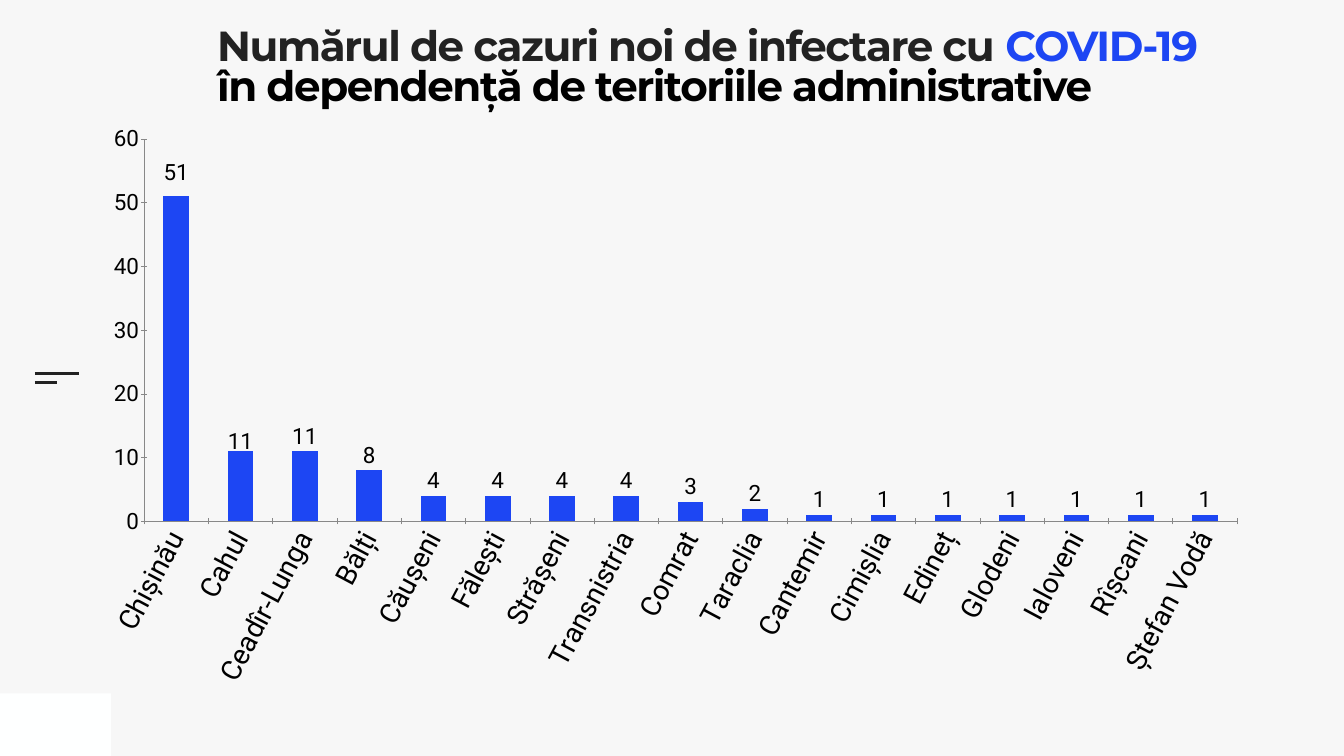
import pptx
import pptx.chart.data
import pptx.dml.color
import pptx.enum.chart
import pptx.enum.shapes
import pptx.util
from lxml import etree
from pptx.oxml.ns import qn

Inches, Pt = pptx.util.Inches, pptx.util.Pt
XL = pptx.enum.chart

# Content
HUES = {"back": "F7F7F7", "box": "FEFFFF", "dark": "222222",
        "blue": "1D46F3", "black": "000000", "axis": "888888"}
TITLE = [
    [("Numărul de cazuri noi de infectare cu ", "dark"), ("COVID-19", "blue")],
    [("în dependență de teritoriile administrative", "black")],
]
CASES = {
    "Chișinău": 51, "Cahul": 11, "Ceadîr-Lunga": 11, "Bălți": 8,
    "Căușeni": 4, "Fălești": 4, "Strășeni": 4, "Transnistria": 4,
    "Comrat": 3, "Taraclia": 2, "Cantemir": 1, "Cimișlia": 1,
    "Edineț": 1, "Glodeni": 1, "Ialoveni": 1, "Rîșcani": 1,
    "Ștefan Vodă": 1,
}
DASHES = [(7.41, 0.88), (7.59, 0.44)]  # top, length
PLOT = {"x": 0.045, "y": 0.022, "w": 0.948, "h": 0.64}
NUDGES = {0: -0.015, 1: 0.01}  # label shifts by bar, share of chart height


def hue(name):
    return pptx.dml.color.RGBColor.from_string(HUES[name])


def style(font, size, color="black", face="Roboto", bold=False):
    font.size, font.name, font.bold = Pt(size), face, bold
    font.color.rgb = hue(color)


def add_text(slide, lines, at, size, face, bold, space, track):
    frame = slide.shapes.add_textbox(*map(Inches, at)).text_frame
    frame.word_wrap = True
    frame.margin_left = frame.margin_right = 0
    frame.margin_top = frame.margin_bottom = 0
    for i, line in enumerate(lines):
        para = frame.add_paragraph() if i else frame.paragraphs[0]
        para.line_spacing = space
        for words, color in line:
            run = para.add_run()
            run.text = words
            style(run.font, size, color, face, bold)
            run.font._element.set("spc", str(track * 100))


def layout(**parts):
    root = etree.Element(qn("c:layout"))
    manual = etree.SubElement(root, qn("c:manualLayout"))
    for tag, value in parts.items():
        etree.SubElement(manual, qn("c:" + tag), val=str(value))
    return root


deck = pptx.Presentation()
deck.slide_width, deck.slide_height = Inches(26.67), Inches(15)
slide = deck.slides.add_slide(deck.slide_layouts[6])
slide.background.fill.solid()
slide.background.fill.fore_color.rgb = hue("back")

# Corner box and side dashes
box = slide.shapes.add_shape(pptx.enum.shapes.MSO_SHAPE.RECTANGLE,
                             *map(Inches, (0, 13.76, 2.2, 1.24)))
box.shadow.inherit = False
box.fill.solid()
box.fill.fore_color.rgb = hue("box")
box.line.fill.background()
for top, length in DASHES:
    dash = slide.shapes.add_connector(
        pptx.enum.shapes.MSO_CONNECTOR.STRAIGHT,
        *map(Inches, (0.69, top, 0.69 + length, top)))
    dash.line.color.rgb = hue("dark")
    dash.line.width = Pt(3)
    etree.SubElement(dash._element.spPr, qn("a:effectLst"))

# Title
add_text(slide, TITLE, (4.31, 0.58, 20.02, 2.73), size=60,
         face="Montserrat", bold=True, space=0.8, track=-2)

# Chart
data = pptx.chart.data.CategoryChartData()
data.categories = list(CASES)
data.add_series("Series 1", list(CASES.values()))
chart = slide.shapes.add_chart(
    XL.XL_CHART_TYPE.COLUMN_CLUSTERED,
    *map(Inches, (1.83, 2.5, 22.88, 11.85)), data).chart
chart.has_legend = chart.has_title = False
style(chart.font, 40)
area = chart._chartSpace.chart.plotArea
for old in area.findall(qn("c:layout")):
    area.remove(old)
area.insert(0, layout(layoutTarget="inner", xMode="edge", yMode="edge", **PLOT))

# Axes
for axis, size in ((chart.category_axis, 40), (chart.value_axis, 32)):
    axis.has_major_gridlines = False
    axis.major_tick_mark = XL.XL_TICK_MARK.CROSS
    axis.minor_tick_mark = XL.XL_TICK_MARK.NONE
    axis.format.line.color.rgb = hue("axis")
    axis.format.line.width = Pt(1)
    style(axis.tick_labels.font, size)
turn = chart.category_axis._element.find(qn("c:txPr")).find(qn("a:bodyPr"))
turn.set("rot", str(-62 * 60000))
chart.value_axis.minimum_scale = 0
chart.value_axis.maximum_scale = 60
chart.value_axis.major_unit = 10

# Bars and their labels
plot = chart.plots[0]
plot.vary_by_categories = False
plot.gap_width = 150
bars = plot.series[0]
bars.format.fill.solid()
bars.format.fill.fore_color.rgb = hue("blue")
labels = bars.data_labels
labels.show_value = True
labels.position = XL.XL_LABEL_POSITION.OUTSIDE_END
style(labels.font, 32)
for i, shift in NUDGES.items():
    label = bars.points[i].data_label
    style(label.font, 32)
    label.position = XL.XL_LABEL_POSITION.OUTSIDE_END
    node = labels._element.findall(qn("c:dLbl"))[i]
    node.insert(1, layout(x=0, y=shift))

deck.save("out.pptx")
